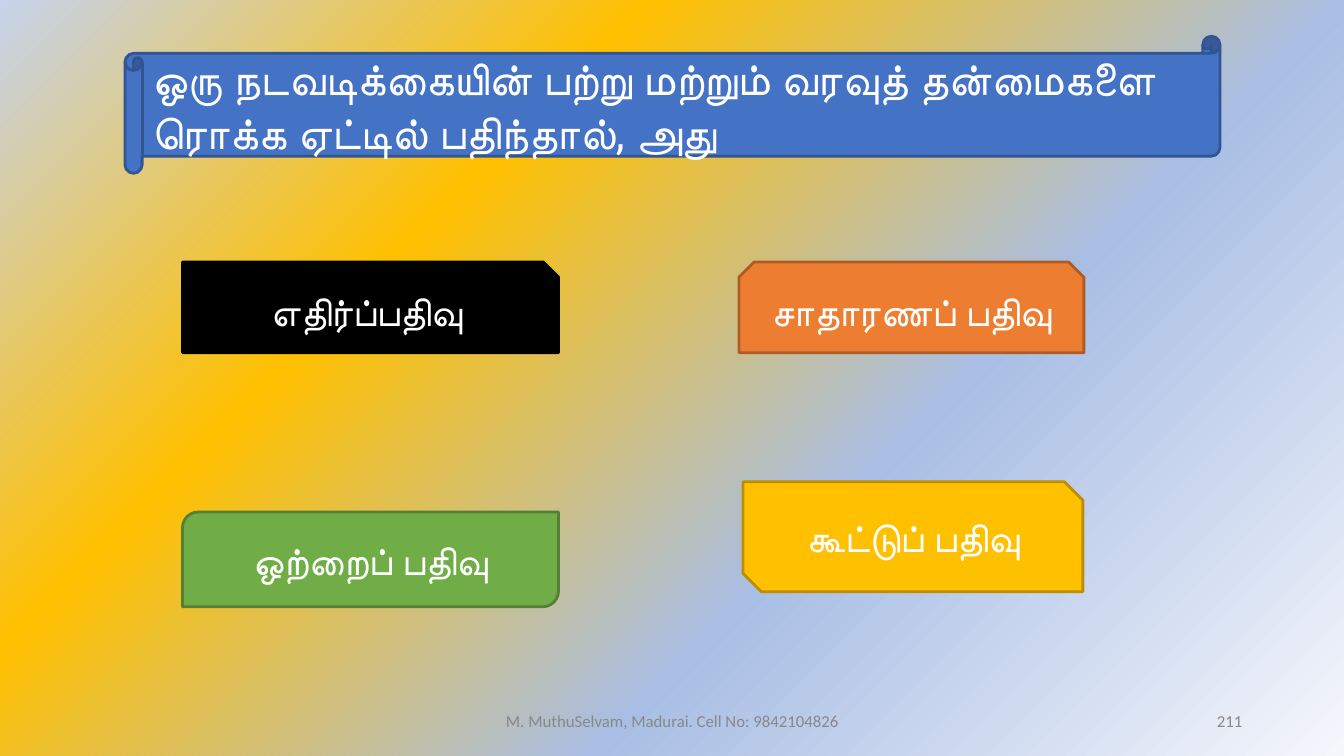
from lxml.etree import SubElement
from pptx import Presentation
from pptx.dml.color import RGBColor
from pptx.enum.shapes import MSO_SHAPE
from pptx.enum.text import MSO_ANCHOR, PP_ALIGN
from pptx.oxml.ns import qn
from pptx.util import Inches, Pt

WHITE = RGBColor(0xFF, 0xFF, 0xFF)
BLACK = RGBColor(0x00, 0x00, 0x00)
GRAY = RGBColor(0x88, 0x88, 0x88)
BLUE = RGBColor(0x44, 0x72, 0xC4)
DARK_BLUE = RGBColor(0x32, 0x54, 0x91)
ORANGE = RGBColor(0xED, 0x7D, 0x31)
DARK_ORANGE = RGBColor(0xAF, 0x5C, 0x24)
GOLD = RGBColor(0xFF, 0xC0, 0x00)
DARK_GOLD = RGBColor(0xBD, 0x8E, 0x00)
GREEN = RGBColor(0x70, 0xAD, 0x47)
DARK_GREEN = RGBColor(0x53, 0x80, 0x35)
BACKGROUND_STOPS = [
    (0, RGBColor(0xF5, 0xF7, 0xFC)),
    (36, RGBColor(0xA9, 0xBE, 0xE4)),
    (69, GOLD),
    (100, RGBColor(0xC5, 0xD3, 0xED)),
]

QUESTION = "ஒரு நடவடிக்கையின் பற்று மற்றும் வரவுத் தன்மைகளை ரொக்க ஏட்டில் பதிந்தால், அது"
ANSWERS = [
    (MSO_SHAPE.SNIP_1_RECTANGLE, (1.81, 2.6, 3.73, 0.9), BLACK, BLACK, "எதிர்ப்பதிவு"),
    (MSO_SHAPE.SNIP_2_SAME_RECTANGLE, (7.33, 2.6, 3.42, 0.9), ORANGE, DARK_ORANGE, "சாதாரணப் பதிவு"),
    (MSO_SHAPE.SNIP_2_DIAG_RECTANGLE, (7.37, 4.78, 3.37, 1.09), GOLD, DARK_GOLD, "கூட்டுப் பதிவு"),
    (MSO_SHAPE.ROUND_2_DIAG_RECTANGLE, (1.81, 5.08, 3.73, 0.94), GREEN, DARK_GREEN, "ஒற்றைப் பதிவு"),
]


def paint_background(slide):
    slide.background.fill.gradient()
    gradient = next(slide.element.iter(qn("a:gradFill")))
    for child in list(gradient):
        gradient.remove(child)
    stops = SubElement(gradient, qn("a:gsLst"))
    for percent, color in BACKGROUND_STOPS:
        stop = SubElement(stops, qn("a:gs"), pos=str(percent * 1000))
        SubElement(stop, qn("a:srgbClr"), val=str(color))
    circle = SubElement(gradient, qn("a:path"), path="circle")
    SubElement(circle, qn("a:fillToRect"), l="100000", t="100000")
    SubElement(gradient, qn("a:tileRect"), r="-100000", b="-100000")


def write_text(shape, text, font_name, size, color, alignment):
    frame = shape.text_frame
    frame.word_wrap = True
    frame.vertical_anchor = MSO_ANCHOR.MIDDLE
    paragraph = frame.paragraphs[0]
    paragraph.text = text
    paragraph.alignment = alignment
    paragraph.font.name = font_name
    paragraph.font.size = Pt(size)
    paragraph.font.color.rgb = color


def add_panel(slide, kind, box, fill, outline, text, size=28, alignment=PP_ALIGN.CENTER):
    shape = slide.shapes.add_shape(kind, *map(Inches, box))
    shape.shadow.inherit = False
    shape.fill.solid()
    shape.fill.fore_color.rgb = fill
    shape.line.color.rgb = outline
    shape.line.width = Pt(2)
    write_text(shape, text, "Roboto", size, WHITE, alignment)


def add_footer(slide, left, width, text, alignment):
    box = slide.shapes.add_textbox(Inches(left), Inches(6.95), Inches(width), Inches(0.4))
    write_text(box, text, "Calibri", 12, GRAY, alignment)


def main():
    presentation = Presentation()
    presentation.slide_width = Inches(13.33)
    presentation.slide_height = Inches(7.5)
    slide = presentation.slides.add_slide(presentation.slide_layouts[6])
    paint_background(slide)
    add_panel(slide, MSO_SHAPE.HORIZONTAL_SCROLL, (1.24, 0.36, 10.86, 1.36),
              BLUE, DARK_BLUE, QUESTION, 32, PP_ALIGN.LEFT)
    for answer in ANSWERS:
        add_panel(slide, *answer)
    add_footer(slide, 4.42, 4.5, "M. MuthuSelvam, Madurai. Cell No: 9842104826", PP_ALIGN.CENTER)
    add_footer(slide, 9.42, 3, "211", PP_ALIGN.RIGHT)
    presentation.save("out.pptx")


if __name__ == "__main__":
    main()
